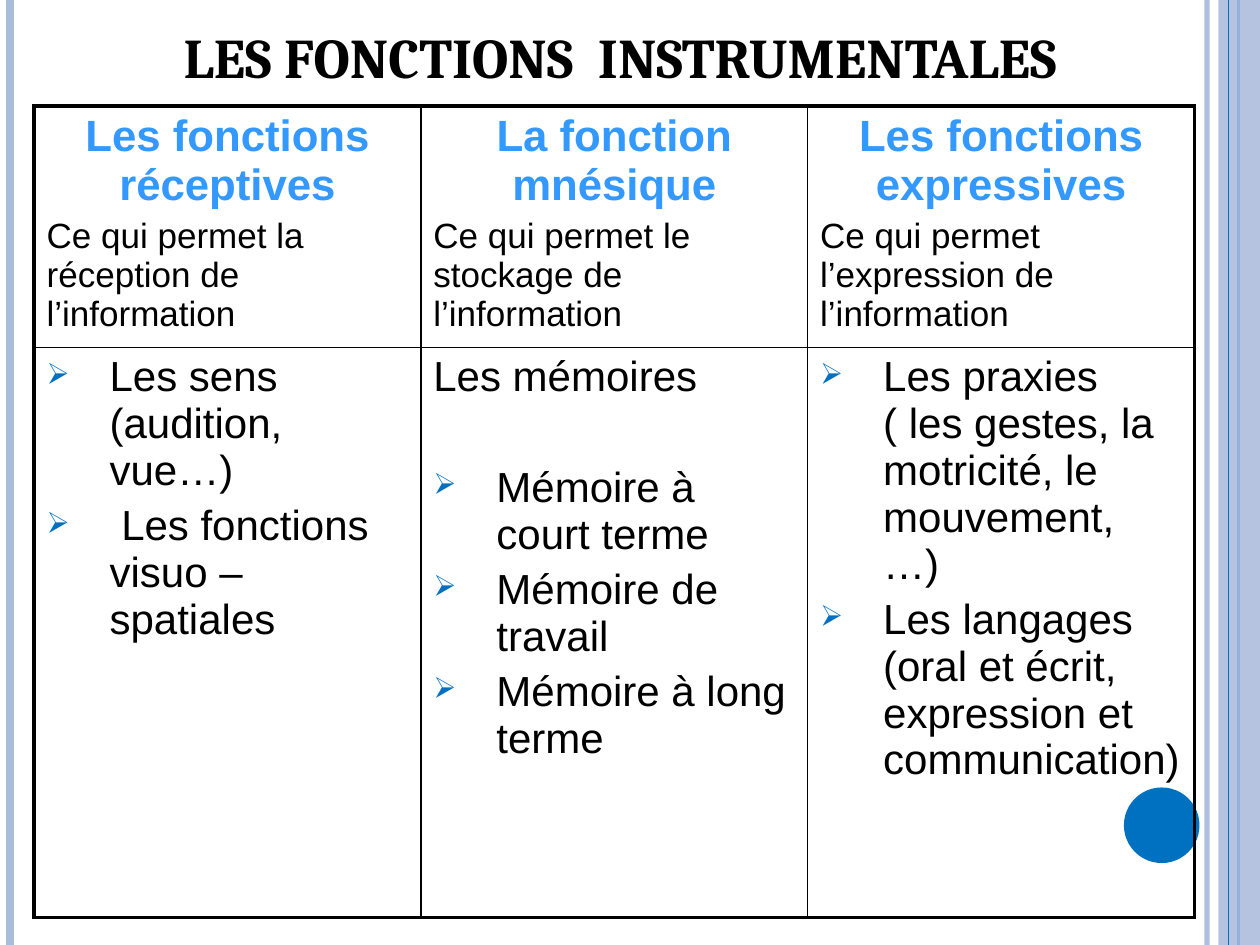
from dataclasses import dataclass

from lxml.etree import SubElement
from pptx import Presentation
from pptx.dml.color import RGBColor
from pptx.enum.shapes import MSO_CONNECTOR, MSO_SHAPE
from pptx.enum.text import PP_ALIGN
from pptx.oxml import parse_xml
from pptx.oxml.ns import nsdecls, qn
from pptx.util import Inches, Pt


@dataclass(frozen=True)
class Theme:
    ink: str = "000000"
    heading: str = "3399FF"
    accent: str = "0070C0"
    rail: str = "ABBBDC"
    title_font: str = "Cambria"
    body_font: str = "Arial"
    title_size: int = 32
    heading_size: int = 25
    summary_size: int = 20
    item_size: int = 24
    outer_rule: float = 2.25
    inner_rule: float = 1


THEME = Theme()
WIDTH, HEIGHT = 10, 7.5
ROW_SHARES = (0.298, 0.702)
LINE_HEIGHT = 1.117

# Heading, summary, lead line, bulleted items
FUNCTIONS = [
    ("Les fonctions réceptives",
     "Ce qui permet la réception de l’information",
     None,
     ["Les sens (audition, vue…)", " Les fonctions visuo –spatiales"]),
    ("La fonction mnésique",
     "Ce qui permet le stockage de l’information",
     "Les mémoires",
     ["Mémoire à court terme", "Mémoire de travail", "Mémoire à long terme"]),
    ("Les fonctions expressives",
     "Ce qui permet l’expression de l’information",
     None,
     ["Les praxies ( les gestes, la motricité, le mouvement, …)",
      "Les langages (oral et écrit, expression et communication)"]),
]


def set_alpha(solid_fill, percent):
    SubElement(solid_fill[0], qn("a:alpha")).set("val", str(percent * 1000))


def write(paragraph, text, size, color=THEME.ink, bold=False,
          font=THEME.body_font, align=PP_ALIGN.LEFT, before=0):
    paragraph.text = text
    paragraph.alignment = align
    paragraph.space_before = Pt(before)
    run_font = paragraph.runs[0].font
    run_font.name, run_font.size, run_font.bold = font, Pt(size), bold
    run_font.color.rgb = RGBColor.from_string(color)


def add_bullet(paragraph):
    properties = paragraph._p.get_or_add_pPr()
    properties.set("marL", str(Inches(0.5)))
    properties.set("indent", str(Inches(-0.5)))
    color = SubElement(properties, qn("a:buClr"))
    SubElement(color, qn("a:srgbClr")).set("val", THEME.accent)
    SubElement(properties, qn("a:buSzPct")).set("val", "70000")
    SubElement(properties, qn("a:buChar")).set("char", "➢")


def set_borders(cell, widths):
    """Draw the cell's rules; widths run left, right, top, bottom."""
    properties = cell._tc.get_or_add_tcPr()
    for index, (side, width) in enumerate(zip("LRTB", widths)):
        properties.insert(index, parse_xml(
            f'<a:ln{side} {nsdecls("a")} w="{Pt(width)}"><a:solidFill>'
            f'<a:srgbClr val="{THEME.ink}"/></a:solidFill></a:ln{side}>'))


def add_rail(slide, x, height, width, color, alpha=None):
    rail = slide.shapes.add_connector(
        MSO_CONNECTOR.STRAIGHT, Inches(x), 0, Inches(x), Inches(height))
    rail.line.width = Pt(width)
    rail.line.color.rgb = RGBColor.from_string(color)
    properties = rail._element.spPr
    if alpha:
        set_alpha(properties.find(qn("a:ln")).find(qn("a:solidFill")), alpha)
    SubElement(properties, qn("a:effectLst"))


def add_solid(slide, kind, box, color):
    solid = slide.shapes.add_shape(kind, *map(Inches, box))
    solid.shadow.inherit = False
    solid.fill.solid()
    solid.fill.fore_color.rgb = RGBColor.from_string(color)
    solid.line.fill.background()
    return solid


def add_side_decor(slide, width, height):
    add_rail(slide, width - 0.42, height, 3, THEME.rail, alpha=93)
    add_rail(slide, 0.08, height, 4.5, THEME.rail)
    add_rail(slide, width - 0.17, height, 1.5, THEME.accent)
    band = add_solid(slide, MSO_SHAPE.RECTANGLE,
                     (width - 0.33, 0, 0.33, height), THEME.rail)
    set_alpha(band._element.spPr.find(qn("a:solidFill")), 87)
    add_rail(slide, width - 0.25, height, 0.75, THEME.accent)
    add_solid(slide, MSO_SHAPE.OVAL,
              (width - 1.08, height - 1.25, 0.6, 0.6), THEME.accent)


def fill_heading(frame, heading, summary):
    write(frame.paragraphs[0], heading, THEME.heading_size, THEME.heading,
          bold=True, align=PP_ALIGN.CENTER)
    write(frame.add_paragraph(), summary, THEME.summary_size,
          before=0.2 * THEME.summary_size)


def fill_items(frame, lead, items):
    """Write the bulleted items, one empty line below the lead if there is one."""
    size = THEME.item_size
    gap = 0.2 * size
    if lead:
        write(frame.paragraphs[0], lead, size)
    for index, item in enumerate(items):
        if index:
            paragraph, before = frame.add_paragraph(), gap
        elif lead:
            paragraph, before = frame.add_paragraph(), 2 * gap + LINE_HEIGHT * size
        else:
            paragraph, before = frame.paragraphs[0], 0
        write(paragraph, item, size, before=before)
        add_bullet(paragraph)


def add_functions_table(slide, box):
    rows, columns = len(ROW_SHARES), len(FUNCTIONS)
    table = slide.shapes.add_table(rows, columns, *map(Inches, box)).table
    table.first_row = table.horz_banding = False
    for row, share in zip(table.rows, ROW_SHARES):
        row.height = Inches(box[3] * share)
    for column, (heading, summary, lead, items) in enumerate(FUNCTIONS):
        table.columns[column].width = Inches(box[2] / columns)
        fill_heading(table.cell(0, column).text_frame, heading, summary)
        fill_items(table.cell(1, column).text_frame, lead, items)
        for row in range(rows):
            cell = table.cell(row, column)
            cell.fill.background()
            on_edge = (column == 0, column == columns - 1,
                       row == 0, row == rows - 1)
            set_borders(cell, [THEME.outer_rule if edge else THEME.inner_rule
                               for edge in on_edge])


def add_title(slide, box):
    frame = slide.shapes.add_textbox(*map(Inches, box)).text_frame
    frame.word_wrap = True
    write(frame.paragraphs[0], "LES FONCTIONS  INSTRUMENTALES",
          THEME.title_size, bold=True, font=THEME.title_font,
          align=PP_ALIGN.CENTER, before=6)


def main():
    deck = Presentation()
    deck.slide_width, deck.slide_height = Inches(WIDTH), Inches(HEIGHT)
    slide = deck.slides.add_slide(deck.slide_layouts[6])
    add_side_decor(slide, WIDTH, HEIGHT)
    add_functions_table(slide, (0.27, 0.84, 9.21, 6.44))
    add_title(slide, (0.28, 0.13, 9.29, 0.62))
    deck.save("out.pptx")


if __name__ == "__main__":
    main()
